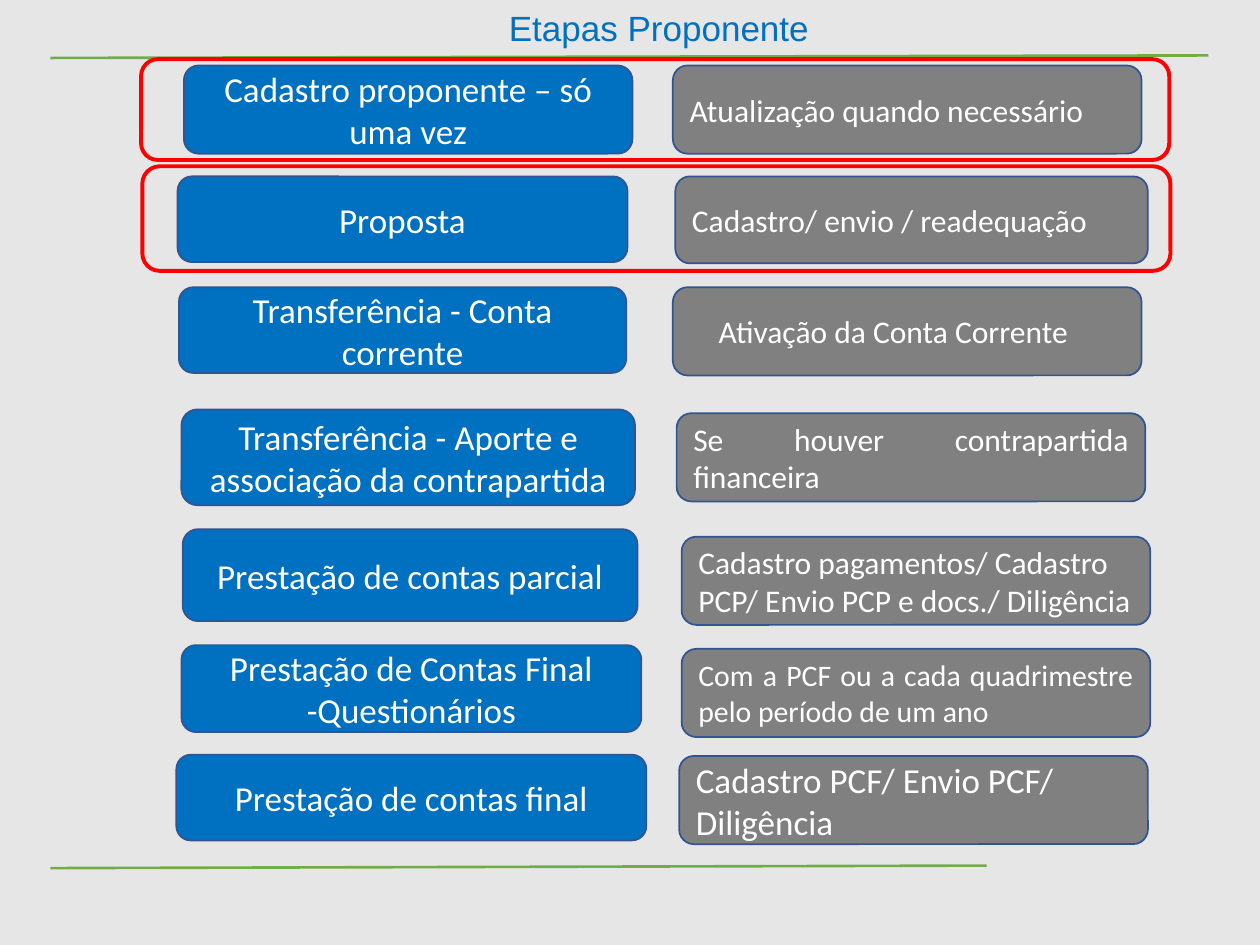
from dataclasses import dataclass

from pptx import Presentation
from pptx.dml.color import RGBColor
from pptx.enum.shapes import MSO_CONNECTOR, MSO_SHAPE
from pptx.enum.text import MSO_ANCHOR, PP_ALIGN
from pptx.oxml.ns import qn
from pptx.util import Inches, Pt


@dataclass(frozen=True)
class Theme:
    background: str = "E7E6E6"
    rule: str = "70AD47"
    step: str = "0070C0"
    detail: str = "808080"
    outline: str = "325491"
    highlight: str = "FF0000"
    text: str = "FFFFFF"
    title_font: str = "Arial"
    body_font: str = "Calibri"
    large: int = 20
    medium: int = 18
    small: int = 17


THEME = Theme()
LEFT, CENTER, JUSTIFY = PP_ALIGN.LEFT, PP_ALIGN.CENTER, PP_ALIGN.JUSTIFY

# Step box, step text
STEPS = [
    ((1.46, 0.52, 3.56, 0.7), "Cadastro proponente – só uma vez"),
    ((1.41, 1.4, 3.57, 0.68), "Proposta"),
    ((1.42, 2.28, 3.55, 0.68), "Transferência - Conta corrente"),
    ((1.44, 3.25, 3.6, 0.76), "Transferência - Aporte e associação da contrapartida"),
    ((1.45, 4.2, 3.61, 0.73), "Prestação de contas parcial"),
    ((1.44, 5.12, 3.65, 0.69), "Prestação de Contas Final -Questionários"),
    ((1.4, 5.99, 3.73, 0.68), "Prestação de contas final"),
]

# Detail box, detail text, size, alignment, left inset
DETAILS = [
    ((5.34, 0.52, 3.72, 0.7), "Atualização quando necessário", THEME.medium, LEFT, 0.1),
    ((5.36, 1.4, 3.75, 0.69), "Cadastro/ envio / readequação", THEME.medium, LEFT, 0.1),
    ((5.34, 2.28, 3.72, 0.7), "Ativação da Conta Corrente", THEME.medium, LEFT, 0.33),
    ((5.37, 3.28, 3.72, 0.7), "Se houver contrapartida financeira", THEME.medium, JUSTIFY, 0.1),
    ((5.41, 4.26, 3.72, 0.7), "Cadastro pagamentos/ Cadastro PCP/ Envio PCP e docs./ Diligência",
     THEME.medium, LEFT, 0.1),
    ((5.41, 5.15, 3.72, 0.7), "Com a PCF ou a cada quadrimestre pelo período de um ano",
     THEME.small, JUSTIFY, 0.1),
    ((5.39, 6, 3.72, 0.7), "Cadastro PCF/ Envio PCF/ Diligência", THEME.large, LEFT, 0.1),
]

HIGHLIGHTS = [(1.12, 0.47, 8.16, 0.8), (1.13, 1.32, 8.16, 0.83)]
RULES = [(0.4, 0.46, 9.59, 0.44), (0.4, 6.89, 7.83, 6.87)]


def rgb(color):
    return RGBColor.from_string(color)


def set_font(p, name, size, color):
    p.font.name = name
    p.font.size = Pt(size)
    p.font.color.rgb = rgb(color)


def add_rule(s, ends):
    line = s.shapes.add_connector(MSO_CONNECTOR.STRAIGHT, *map(Inches, ends))
    line.line.color.rgb = rgb(THEME.rule)
    line.line.width = Pt(1.5)
    sp_pr = line._element.spPr
    sp_pr.append(sp_pr.makeelement(qn("a:effectLst"), {}))


def add_rounded(s, box, outline, width):
    sp = s.shapes.add_shape(MSO_SHAPE.ROUNDED_RECTANGLE, *map(Inches, box))
    sp.shadow.inherit = False
    sp.line.color.rgb = rgb(outline)
    sp.line.width = Pt(width)
    return sp


def add_card(s, box, text, fill, size=THEME.large, align=CENTER, inset=0.1):
    sp = add_rounded(s, box, THEME.outline, 1)
    sp.fill.solid()
    sp.fill.fore_color.rgb = rgb(fill)
    tf = sp.text_frame
    tf.word_wrap = True
    tf.vertical_anchor = MSO_ANCHOR.MIDDLE
    tf.margin_left = Inches(inset)
    p = tf.paragraphs[0]
    p.text = text
    p.alignment = align
    set_font(p, THEME.body_font, size, THEME.text)


def add_highlight(s, box):
    add_rounded(s, box, THEME.highlight, 2.25).fill.background()


def add_title(s, box, text):
    tf = s.shapes.add_textbox(*map(Inches, box)).text_frame
    tf.word_wrap = False
    p = tf.paragraphs[0]
    p.text = text
    set_font(p, THEME.title_font, THEME.large, THEME.step)


def main():
    prs = Presentation()
    prs.slide_width, prs.slide_height = Inches(10), Inches(7.5)
    s = prs.slides.add_slide(prs.slide_layouts[6])
    s.background.fill.solid()
    s.background.fill.fore_color.rgb = rgb(THEME.background)

    for ends in RULES:
        add_rule(s, ends)
    for box, text in STEPS:
        add_card(s, box, text, THEME.step)
    for box, text, size, align, inset in DETAILS:
        add_card(s, box, text, THEME.detail, size, align, inset)
    for box in HIGHLIGHTS:
        add_highlight(s, box)
    add_title(s, (3.94, 0, 2.6, 0.44), "Etapas Proponente")
    prs.save("out.pptx")


if __name__ == "__main__":
    main()
